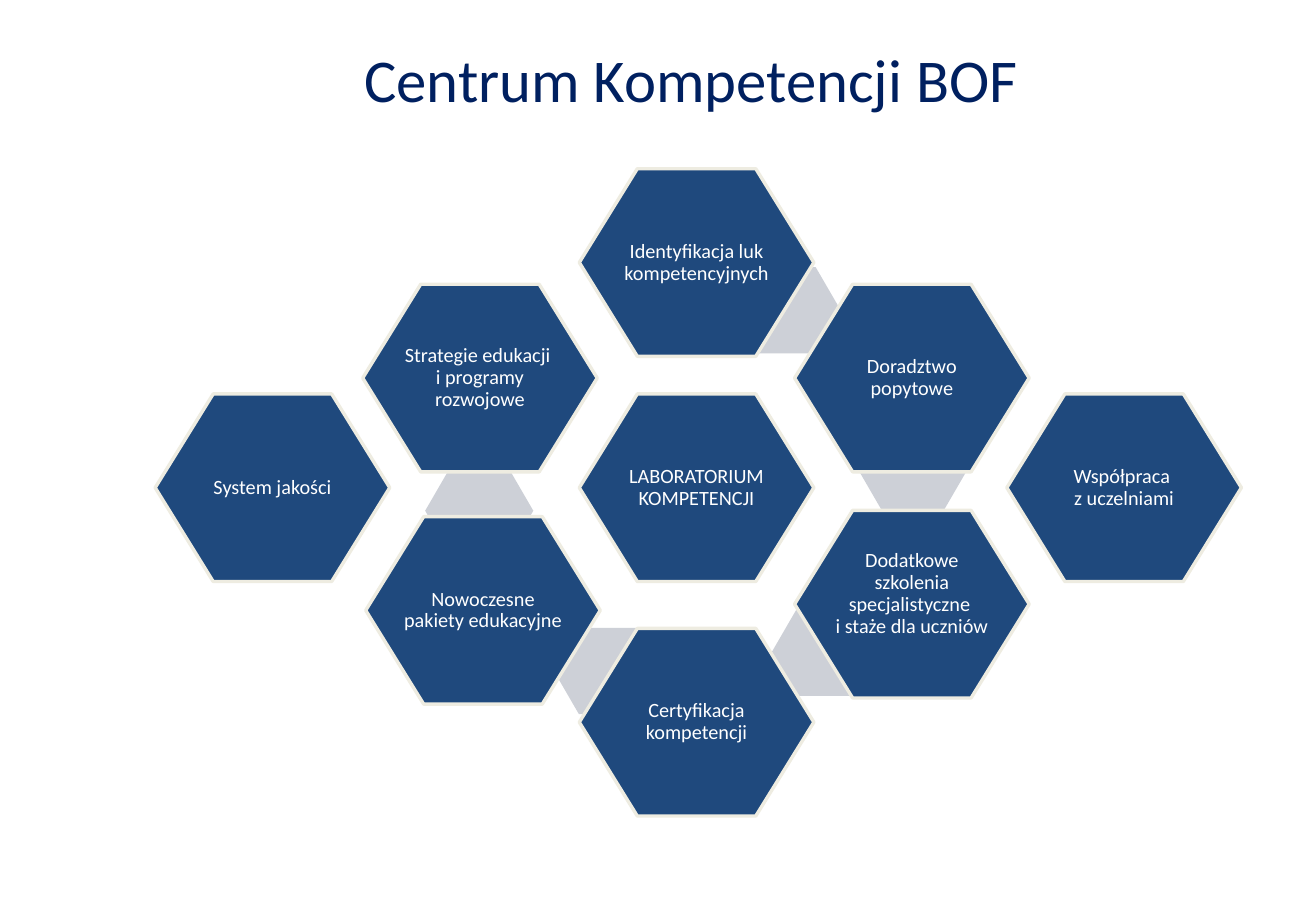
from dataclasses import dataclass

from pptx import Presentation
from pptx.dml.color import RGBColor
from pptx.enum import shapes, text
from pptx.util import Pt

COLORS = {
    "title": "002060",
    "cell": "1F497D",
    "outline": "EEECE1",
    "link": "CDD0D7",
    "label": "FFFFFF",
}
FONT = "Calibri"
CELL_WIDTH, CELL_HEIGHT, CELL_SLOPE = 139, 111.2, 34.4
LINK_WIDTH, LINK_HEIGHT = 64.1, 51.1
INSET_X, INSET_Y = 22.3, 19.4
FAR_LEFT, LEFT, MIDDLE, RIGHT, FAR_RIGHT = 92, 215, 343.4, 471, 596.8
TOP, UPPER, CENTER, LOWER, BOTTOM = 100, 168.5, 233.5, 302.5, 372.5


@dataclass(frozen=True)
class Link:
    left: float
    top: float


@dataclass(frozen=True)
class Cell:
    label: str
    left: float
    top: float
    lift: float = 0


LINKS = [
    Link(434.2, 158.4),
    Link(509, 253.4),
    Link(457.2, 361.4),
    Link(328.3, 372.2),
    Link(252, 277.2),
]

CELLS = [
    Cell("Identyfikacja luk kompetencyjnych", MIDDLE, TOP),
    Cell("Doradztwo popytowe", RIGHT, UPPER),
    Cell("Dodatkowe szkolenia specjalistyczne \ni staże dla uczniów", RIGHT, LOWER, lift=6),
    Cell("Certyfikacja kompetencji", MIDDLE, BOTTOM),
    Cell("System jakości", FAR_LEFT, CENTER),
    Cell("Strategie edukacji \ni programy rozwojowe", LEFT, UPPER),
    Cell("Współpraca \nz uczelniami", FAR_RIGHT, CENTER),
    Cell("Nowoczesne pakiety edukacyjne", 216.8, 306.2),
    Cell("LABORATORIUM KOMPETENCJI", MIDDLE, CENTER),
]


def color(name: str) -> RGBColor:
    return RGBColor.from_string(COLORS[name])


def write(box, content: str, *, size: float, ink: str, align, anchor,
          margins: tuple[float, float, float, float], line_spacing: float = 1.0) -> None:
    frame = box.text_frame
    frame.word_wrap = True
    frame.auto_size = text.MSO_AUTO_SIZE.NONE
    frame.vertical_anchor = anchor
    left, top, right, bottom = margins
    frame.margin_left, frame.margin_top = Pt(left), Pt(top)
    frame.margin_right, frame.margin_bottom = Pt(right), Pt(bottom)
    para = frame.paragraphs[0]
    para.alignment = align
    para.line_spacing = line_spacing
    para.space_before = Pt(0)
    for index, line in enumerate(content.split("\n")):
        if index:
            para.add_line_break()
        span = para.add_run()
        span.text = line
        span.font.name = FONT
        span.font.size = Pt(size)
        span.font.color.rgb = color(ink)


def paint(box, fill: str) -> None:
    box.shadow.inherit = False
    box.fill.solid()
    box.fill.fore_color.rgb = color(fill)


def draw_link(page, link: Link) -> None:
    box = page.shapes.add_shape(shapes.MSO_SHAPE.HEXAGON, Pt(link.left), Pt(link.top),
                                Pt(LINK_WIDTH), Pt(LINK_HEIGHT))
    box.adjustments[0] = 0.29
    paint(box, "link")
    box.line.fill.background()


def draw_cell(page, cell: Cell) -> None:
    right, bottom = cell.left + CELL_WIDTH, cell.top + CELL_HEIGHT
    middle = cell.top + CELL_HEIGHT / 2
    corners = [
        (cell.left + CELL_SLOPE, cell.top),
        (right - CELL_SLOPE, cell.top),
        (right, middle),
        (right - CELL_SLOPE, bottom),
        (cell.left + CELL_SLOPE, bottom),
    ]
    builder = page.shapes.build_freeform(Pt(cell.left), Pt(middle))
    builder.add_line_segments([(Pt(x), Pt(y)) for x, y in corners], close=True)
    box = builder.convert_to_shape()
    paint(box, "cell")
    box.line.color.rgb = color("outline")
    box.line.width = Pt(2)
    write(box, cell.label, size=12, ink="label", align=text.PP_ALIGN.CENTER,
          anchor=text.MSO_ANCHOR.MIDDLE, line_spacing=0.9,
          margins=(INSET_X, INSET_Y, INSET_X, INSET_Y + 2 * cell.lift))


def draw_title(page, content: str) -> None:
    box = page.shapes.title
    box.left, box.top, box.width, box.height = Pt(208.8), Pt(20.9), Pt(425.5), Pt(51.1)
    write(box, content, size=36, ink="title", align=text.PP_ALIGN.LEFT,
          anchor=text.MSO_ANCHOR.TOP, margins=(7.2, 3.6, 7.2, 3.6))


def main() -> None:
    deck = Presentation()
    deck.slide_width, deck.slide_height = Pt(780), Pt(540)
    page = deck.slides.add_slide(deck.slide_layouts[5])
    draw_title(page, "Centrum Kompetencji BOF")
    for link in LINKS:
        draw_link(page, link)
    for cell in CELLS:
        draw_cell(page, cell)
    deck.save("out.pptx")


if __name__ == "__main__":
    main()
